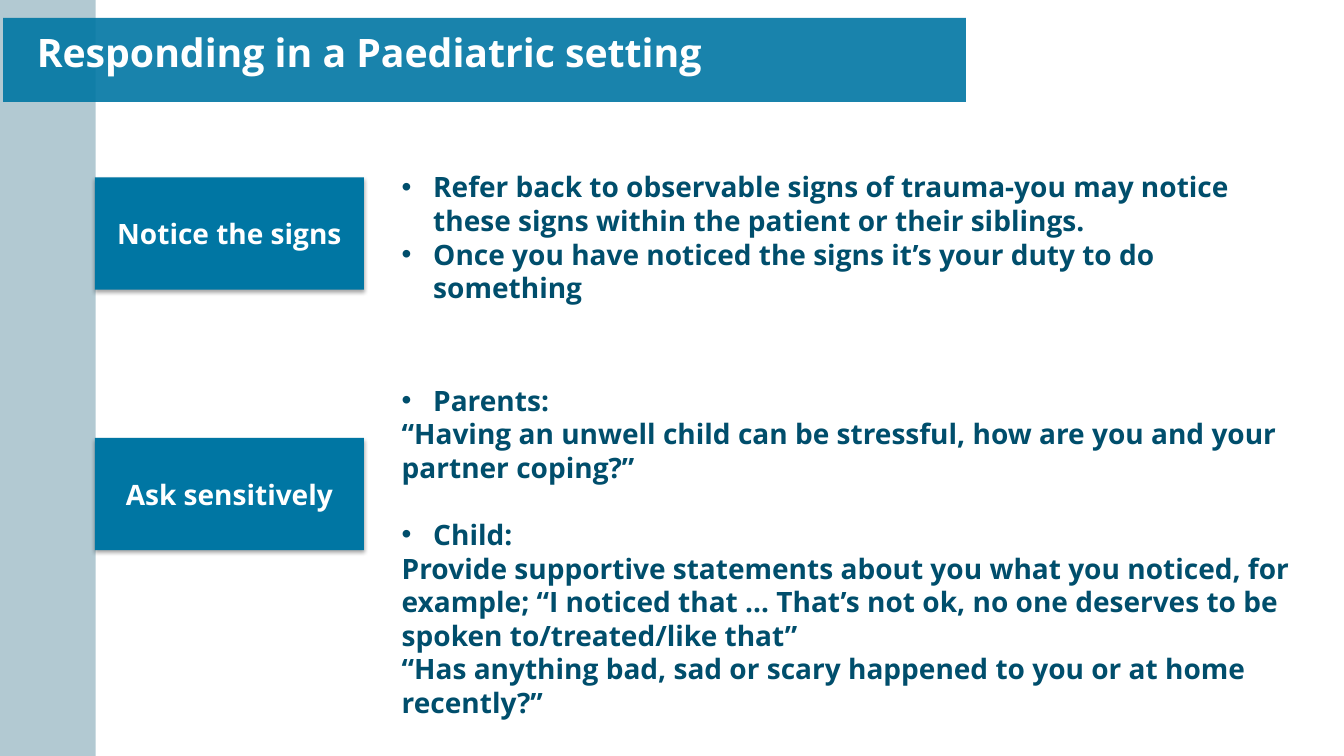
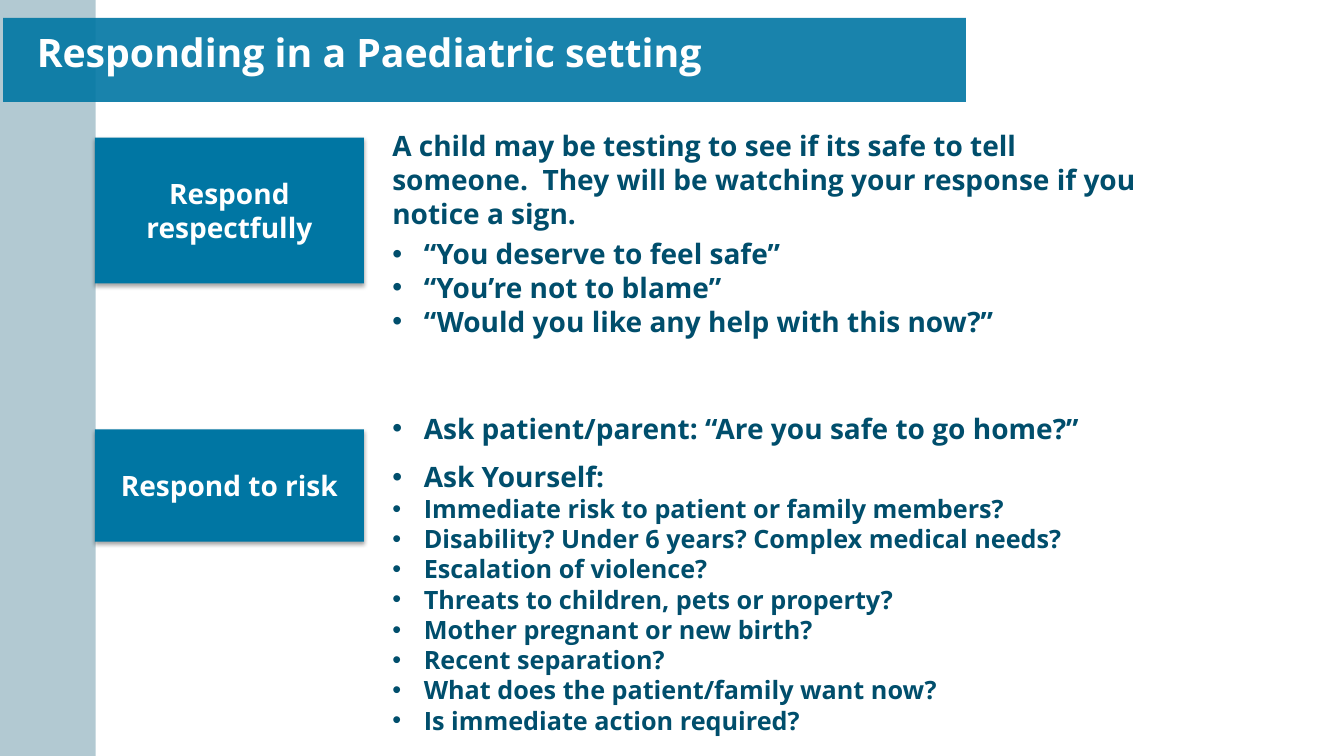
from dataclasses import dataclass

from lxml.etree import SubElement
from pptx import Presentation
from pptx.dml.color import RGBColor
from pptx.enum.shapes import MSO_SHAPE
from pptx.enum.text import MSO_ANCHOR, MSO_AUTO_SIZE, PP_ALIGN
from pptx.oxml.ns import qn
from pptx.util import Inches, Pt

FONT = "Open Sans"
NAVY, BLUE, WHITE = "004E6C", "0076A3", "FFFFFF"
WIDTH, HEIGHT = Inches(13.33), Inches(7.5)
COLS, ROWS = 128, 72
INDENT = Pt(22.5)
LABEL_COL, LABEL_COLS = 9.05, 25.6
TITLE = "Responding in a Paediatric setting"


@dataclass
class Box:
    """A rectangle in grid columns and rows."""
    col: float
    row: float
    cols: float
    rows: float

    def emu(self) -> tuple[int, ...]:
        return (int(self.col * WIDTH / COLS), int(self.row * HEIGHT / ROWS),
                int(self.cols * WIDTH / COLS), int(self.rows * HEIGHT / ROWS))


@dataclass
class Line:
    text: str
    bullet: bool = True
    size: int = 20
    before: float = 0


@dataclass
class Topic:
    label: str
    label_row: float
    label_rows: float
    body: Box
    lines: list[Line]


SIDE_BAND = Box(0, 0, 9.1, ROWS)
TITLE_BAND = Box(0.3, 1.7, 91.7, 8)
TITLE_BOX = Box(3.5, 2.7, 73.8, 4.5)

SLIDES = [
    [
        Topic("Notice the signs", 16.9, 10.7, Box(37.3, 15.7, 87.5, 13.9), [
            Line("Refer back to observable signs of trauma-you may notice "
                 "these signs within the patient or their siblings."),
            Line("Once you have noticed the signs it’s your duty to do something"),
        ]),
        Topic("Ask sensitively", 41.7, 10.7, Box(37.3, 36, 90.6, 36), [
            Line("Parents:"),
            Line("“Having an unwell child can be stressful, how are you and "
                 "your partner coping?”", bullet=False),
            Line("Child:", before=24),
            Line("Provide supportive statements about you what you noticed, for "
                 "example; “I noticed that … That’s not ok, no one deserves to be "
                 "spoken to/treated/like that”", bullet=False),
            Line("“Has anything bad, sad or scary happened to you or at home "
                 "recently?”", bullet=False),
        ]),
    ],
    [
        Topic("Respond respectfully", 13.1, 13.9, Box(36.4, 11.8, 74.5, 20.9), [
            Line("A child may be testing to see if its safe to tell someone.  "
                 "They will be watching your response if you notice a sign.",
                 bullet=False),
            Line("“You deserve to feel safe”", before=5),
            Line("“You’re not to blame”"),
            Line("“Would you like any help with this now?”"),
        ]),
        Topic("Respond to risk", 40.9, 10.7, Box(36.4, 38.7, 70.3, 32.1), [
            Line("Ask patient/parent: “Are you safe to go home?”"),
            Line("Ask Yourself:", before=10.5),
            Line("Immediate risk to patient or family members?", size=18),
            Line("Disability? Under 6 years? Complex medical needs?", size=18),
            Line("Escalation of violence?", size=18),
            Line("Threats to children, pets or property?", size=18),
            Line("Mother pregnant or new birth?", size=18),
            Line("Recent separation?", size=18),
            Line("What does the patient/family want now?", size=18),
            Line("Is immediate action required?", size=18),
        ]),
    ],
]


def rgb(color: str) -> RGBColor:
    return RGBColor.from_string(color)


def place(sp, box: Box) -> None:
    sp.left, sp.top, sp.width, sp.height = box.emu()


def style(p, size: float, color: str) -> None:
    for r in p.runs:
        r.font.name, r.font.size, r.font.bold = FONT, Pt(size), True
        r.font.color.rgb = rgb(color)


def add_rect(s, box: Box, color: str, opacity: int = 100):
    sp = s.shapes.add_shape(MSO_SHAPE.RECTANGLE, *box.emu())
    sp.shadow.inherit = False
    sp.fill.solid()
    sp.fill.fore_color.rgb = rgb(color)
    sp.line.fill.background()
    if opacity < 100:
        fill = sp._element.spPr.find(qn("a:solidFill"))
        SubElement(fill[0], qn("a:alpha"), val=str(opacity * 1000))
    return sp


def add_shadow(sp) -> None:
    effects = sp._element.spPr.find(qn("a:effectLst"))
    shadow = SubElement(effects, qn("a:outerShdw"), blurRad=str(Pt(3.1)),
                        dist=str(Pt(1.8)), dir="5400000", rotWithShape="0")
    color = SubElement(shadow, qn("a:srgbClr"), val="000000")
    SubElement(color, qn("a:alpha"), val="35000")


def add_label(s, topic: Topic) -> None:
    sp = add_rect(s, Box(LABEL_COL, topic.label_row, LABEL_COLS, topic.label_rows), BLUE)
    add_shadow(sp)
    tf = sp.text_frame
    tf.word_wrap = True
    tf.vertical_anchor = MSO_ANCHOR.MIDDLE
    tf.text = topic.label
    p = tf.paragraphs[0]
    p.alignment = PP_ALIGN.CENTER
    style(p, 20, WHITE)


def set_bullet(p, bullet: bool) -> None:
    pPr = p._p.get_or_add_pPr()
    indent = INDENT if bullet else 0
    pPr.set("marL", str(indent))
    pPr.set("indent", str(-indent))
    if bullet:
        SubElement(pPr, qn("a:buFont"), typeface="Arial")
        SubElement(pPr, qn("a:buChar"), char="•")
    else:
        SubElement(pPr, qn("a:buNone"))


def fill_body(sp, topic: Topic) -> None:
    place(sp, topic.body)
    tf = sp.text_frame
    tf.auto_size = MSO_AUTO_SIZE.NONE
    tf.text = "\n".join(line.text for line in topic.lines)
    for p, line in zip(tf.paragraphs, topic.lines):
        set_bullet(p, line.bullet)
        p.space_before = Pt(line.before)
        style(p, line.size, NAVY)


def fill_title(sp) -> None:
    place(sp, TITLE_BOX)
    tf = sp.text_frame
    tf.auto_size = MSO_AUTO_SIZE.NONE
    tf.vertical_anchor = MSO_ANCHOR.TOP
    tf.margin_left = tf.margin_top = tf.margin_right = tf.margin_bottom = 0
    tf.text = TITLE
    p = tf.paragraphs[0]
    p.alignment = PP_ALIGN.LEFT
    style(p, 28, WHITE)


def move_to_layout(sp, layout) -> None:
    layout.shapes._spTree.append(sp._element)


def main() -> None:
    prs = Presentation()
    prs.slide_width, prs.slide_height = WIDTH, HEIGHT
    layout = prs.slide_layouts.get_by_name("Two Content")
    slides = [prs.slides.add_slide(layout) for _ in SLIDES]

    # The bands belong to the layout, so every slide shows them behind its text.
    for box, color, opacity in ((SIDE_BAND, NAVY, 30), (TITLE_BAND, BLUE, 90)):
        move_to_layout(add_rect(slides[0], box, color, opacity), layout)

    for s, topics in zip(slides, SLIDES):
        fill_title(s.shapes.title)
        for idx, topic in enumerate(topics, start=1):
            fill_body(s.placeholders[idx], topic)
            add_label(s, topic)
    prs.save("out.pptx")


if __name__ == "__main__":
    main()
